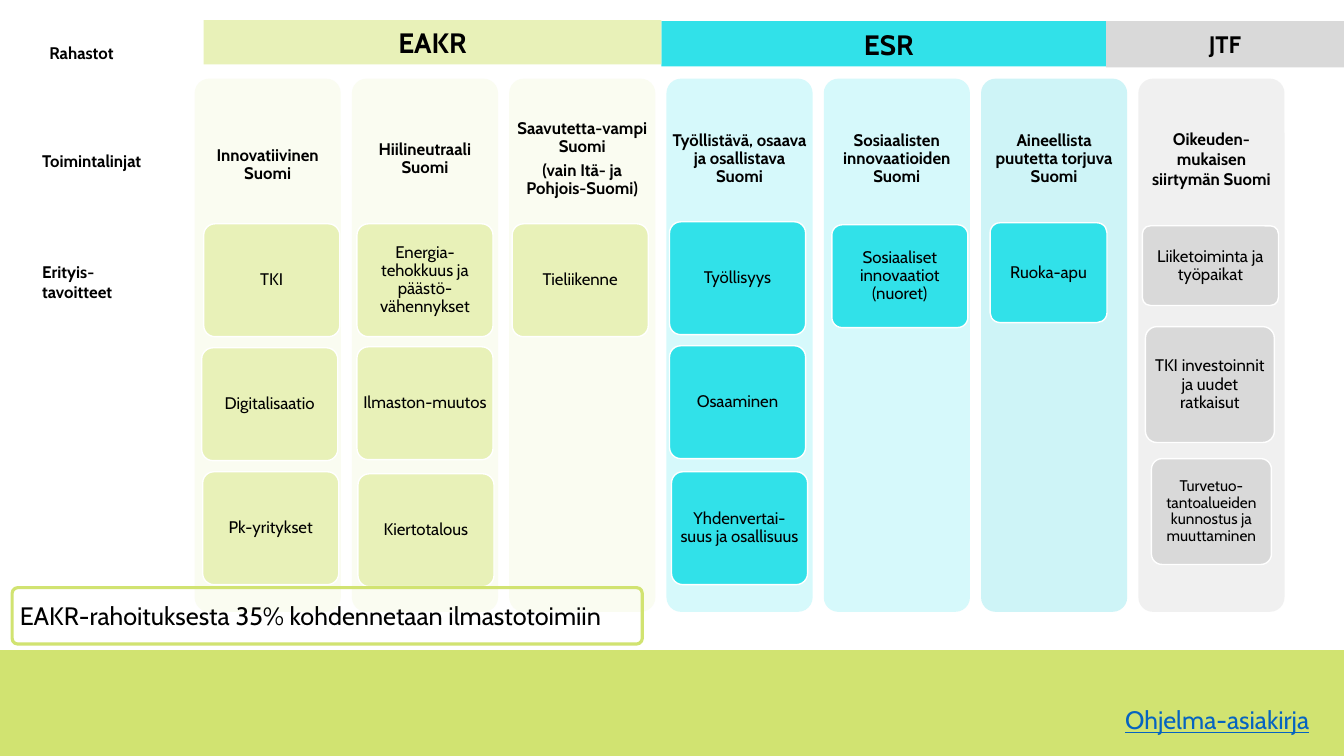
from dataclasses import dataclass

from lxml.etree import SubElement
from pptx import Presentation
from pptx.dml.color import RGBColor
from pptx.enum.shapes import MSO_SHAPE as Preset
from pptx.enum.text import MSO_ANCHOR as Anchor, PP_ALIGN as Align
from pptx.oxml.ns import qn
from pptx.util import Inches, Pt


@dataclass(frozen=True)
class Theme:
    font: str = "Cabin"
    ink: str = "000000"
    white: str = "FFFFFF"
    lime: str = "D1E371"
    eakr: str = "E8F1B8"
    eakr_pale: str = "FAFCF1"
    esr: str = "31E1E9"
    esr_pale: str = "D6F9FB"
    esr_aid: str = "CEF4F7"
    jtf: str = "D9D9D9"
    jtf_pale: str = "E5E5E5"
    link: str = "0563C1"
    fund: float = 20
    fund_small: float = 17
    note: float = 18
    body: float = 12
    small: float = 11


@dataclass(frozen=True)
class Box:
    left: float
    top: float
    width: float
    height: float


@dataclass(frozen=True)
class Style:
    size: float
    bold: bool = False
    underline: bool = False
    color: str = Theme.ink
    align: Align = Align.CENTER
    anchor: Anchor = Anchor.MIDDLE
    leading: float = 1.0
    after: float = 0
    insets: tuple[float, float, float, float] = (0.1, 0.05, 0.1, 0.05)


@dataclass(frozen=True)
class Goal:
    text: str
    shift_x: float
    shift_y: float = 0
    width: float = 1.35
    height: float = 1.12
    size: float = Theme.body


@dataclass(frozen=True)
class Priority:
    heading: tuple[str, ...]
    pale: str
    strong: str
    goals: tuple[Goal, ...]
    alpha: int = 100
    leading: float = 0.9
    after: float = 4.2
    inset_top: float = 0.05


@dataclass(frozen=True)
class Fund:
    name: str
    box: Box
    fill: str
    size: float = Theme.fund


SLIDE_WIDTH, SLIDE_HEIGHT = 13.33, 7.5
COLUMN_LEFT, COLUMN_PITCH, COLUMN_WIDTH = 1.93, 1.56, 1.45
COLUMN_TOP, COLUMN_HEIGHT, HEADING_HEIGHT = 0.78, 5.29, 1.59
GOAL_TOP, GOAL_PITCH = 2.22, 1.23
FOOTER_HEIGHT = 0.14 * SLIDE_HEIGHT

T = Theme()
FUNDS = (
    Fund("ESR", Box(6.56, 0.21, 4.51, 0.45), T.esr),
    Fund("EAKR", Box(2.02, 0.2, 4.54, 0.44), T.eakr),
    Fund("JTF", Box(10.97, 0.21, SLIDE_WIDTH - 10.97, 0.46), T.jtf, T.fund_small),
)
ROW_LABELS = (
    ("Rahastot", Box(0.39, 0.37, 1.28, 0.3)),
    ("Toimintalinjat", Box(0.32, 1.45, 1.53, 0.3)),
    ("Erityis-tavoitteet", Box(0.32, 2.55, 1.26, 0.5)),
)
PRIORITIES = (
    Priority(("Innovatiivinen Suomi",), T.eakr_pale, T.eakr, (
        Goal("TKI", 0.09), Goal("Digitalisaatio", 0.07), Goal("Pk-yritykset", 0.08),
    ), inset_top=0.18),
    Priority(("Hiilineutraali Suomi",), T.eakr_pale, T.eakr, (
        Goal("Energia-tehokkuus ja päästö-vähennykset", 0.05),
        Goal("Ilmaston-muutos", 0.05, -0.01),
        Goal("Kiertotalous", 0.06, 0.02),
    )),
    Priority(("Saavutetta-vampi Suomi", "(vain Itä- ja Pohjois-Suomi)"),
             T.eakr_pale, T.eakr, (Goal("Tieliikenne", 0.03),)),
    Priority(("Työllistävä, osaava ja osallistava Suomi",), T.esr_pale, T.esr, (
        Goal("Työllisyys", 0.03, -0.02),
        Goal("Osaaminen", 0.03, -0.02),
        Goal("Yhdenvertai-suus ja osallisuus", 0.05),
    )),
    Priority(("Sosiaalisten innovaatioiden Suomi",), T.esr_pale, T.esr, (
        Goal("Sosiaaliset innovaatiot (nuoret)", 0.08, 0.01, height=1.02),
    )),
    Priority(("Aineellista puutetta torjuva Suomi",), T.esr_aid, T.esr, (
        Goal("Ruoka-apu", 0.09, -0.01, 1.16, 0.99),
    )),
    Priority(("Oikeuden-", "mukaisen siirtymän Suomi"), T.jtf_pale, T.jtf, (
        Goal("Liiketoiminta ja työpaikat", 0.04, 0.02, height=0.79),
        Goal("TKI investoinnit ja uudet ratkaisut", 0.07, -0.21, 1.28, 1.15),
        Goal("Turvetuo-tantoalueiden kunnostus ja muuttaminen", 0.13, -0.13,
             1.19, 1.05, T.small),
    ), alpha=54, leading=1.0, after=0),
)


def place(box: Box) -> tuple[Inches, ...]:
    return tuple(Inches(n) for n in (box.left, box.top, box.width, box.height))


def write(holder, paragraphs: tuple[str, ...], style: Style) -> None:
    frame = holder.text_frame
    frame.word_wrap = True
    frame.vertical_anchor = style.anchor
    (frame.margin_left, frame.margin_top,
     frame.margin_right, frame.margin_bottom) = map(Inches, style.insets)
    for index, text in enumerate(paragraphs):
        paragraph = frame.add_paragraph() if index else frame.paragraphs[0]
        paragraph.alignment = style.align
        paragraph.line_spacing = style.leading
        paragraph.space_after = Pt(style.after)
        run = paragraph.add_run()
        run.text = text
        run.font.name = T.font
        run.font.size = Pt(style.size)
        run.font.bold = style.bold
        run.font.underline = style.underline
        run.font.color.rgb = RGBColor.from_string(style.color)


def add_label(slide, box: Box, paragraphs: tuple[str, ...], style: Style) -> None:
    write(slide.shapes.add_textbox(*place(box)), paragraphs, style)


def add_panel(slide, box: Box, fill: str | None, line: str | None = None,
              weight: float = 1, rounded: bool = True, alpha: int = 100):
    preset = Preset.ROUNDED_RECTANGLE if rounded else Preset.RECTANGLE
    panel = slide.shapes.add_shape(preset, *place(box))
    panel.shadow.inherit = False
    if rounded:
        panel.adjustments[0] = 0.1
    if fill:
        panel.fill.solid()
        panel.fill.fore_color.rgb = RGBColor.from_string(fill)
    else:
        panel.fill.background()
    if alpha < 100:
        tint = panel.fill._xPr.find(qn("a:solidFill"))[0]
        SubElement(tint, qn("a:alpha"), val=str(alpha * 1000))
    if line:
        panel.line.color.rgb = RGBColor.from_string(line)
        panel.line.width = Pt(weight)
    else:
        panel.line.fill.background()
    return panel


def add_priority(slide, index: int, priority: Priority) -> None:
    left = COLUMN_LEFT + index * COLUMN_PITCH
    add_panel(slide, Box(left, COLUMN_TOP, COLUMN_WIDTH, COLUMN_HEIGHT),
              priority.pale, alpha=priority.alpha)
    add_label(slide, Box(left, COLUMN_TOP, COLUMN_WIDTH, HEADING_HEIGHT), priority.heading,
              Style(T.body, bold=True, leading=priority.leading, after=priority.after,
                    insets=(0.05, priority.inset_top, 0.05, 0.05)))
    for row, goal in enumerate(priority.goals):
        top = GOAL_TOP + row * GOAL_PITCH + goal.shift_y
        card = add_panel(slide, Box(left + goal.shift_x, top, goal.width, goal.height),
                         priority.strong, T.white)
        write(card, (goal.text,),
              Style(goal.size, leading=0.9, after=4.2, insets=(0.03,) * 4))


def main() -> None:
    deck = Presentation()
    deck.slide_width, deck.slide_height = Inches(SLIDE_WIDTH), Inches(SLIDE_HEIGHT)
    slide = deck.slides.add_slide(deck.slide_layouts[6])
    add_panel(slide, Box(0, SLIDE_HEIGHT - FOOTER_HEIGHT, SLIDE_WIDTH, FOOTER_HEIGHT),
              T.lime, rounded=False)
    for index, priority in enumerate(PRIORITIES):
        add_priority(slide, index, priority)
    for text, box in ROW_LABELS:
        add_label(slide, box, (text,),
                  Style(T.body, bold=True, align=Align.LEFT, anchor=Anchor.TOP))
    for fund in FUNDS:
        band = add_panel(slide, fund.box, fund.fill, rounded=False)
        write(band, (fund.name,), Style(fund.size, bold=True))
    climate_note = add_panel(slide, Box(0.12, 5.83, 6.25, 0.56), None, T.lime, 2.25)
    write(climate_note, ("EAKR-rahoituksesta 35% kohdennetaan ilmastotoimiin",),
          Style(T.note, align=Align.LEFT, insets=(0.06, 0.05, 0.05, 0.05)))
    add_label(slide, Box(11.16, 6.99, SLIDE_WIDTH - 11.16, 0.3), ("Ohjelma-asiakirja",),
              Style(T.note, underline=True, color=T.link, align=Align.LEFT,
                    anchor=Anchor.TOP, insets=(0,) * 4))
    deck.save("out.pptx")


if __name__ == "__main__":
    main()
